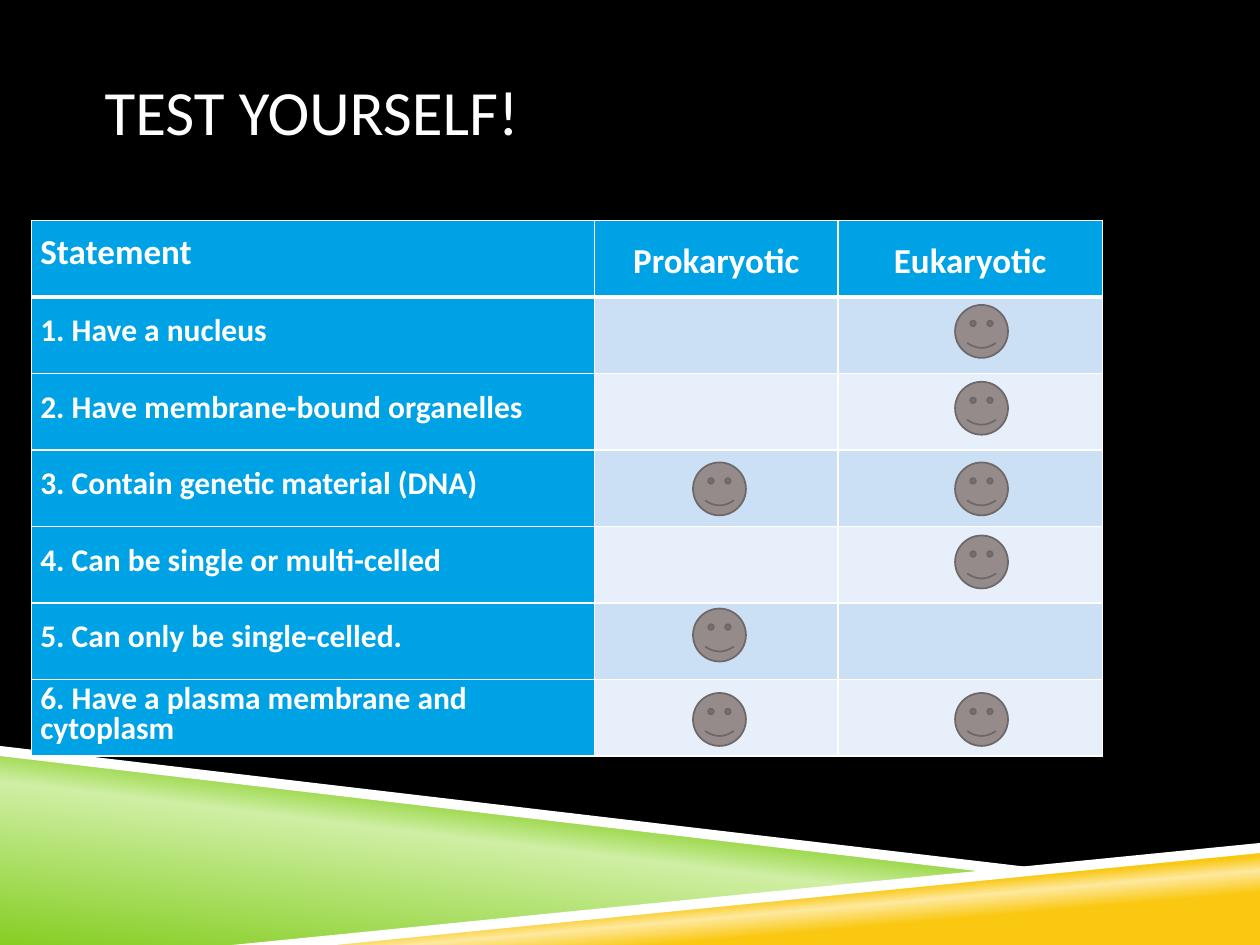
import dataclasses
import typing

import lxml.etree
import pptx
import pptx.dml.color
import pptx.dml.fill
import pptx.enum.shapes
import pptx.enum.text
import pptx.oxml
import pptx.oxml.ns
import pptx.util

EMU_PER_PX = 9144
FONT = "Calibri"
WHITE = "FFFFFF"
HEADER_BLUE = "00A2E6"
BAND_COLORS = ("CCE0F5", "E7F0FA")
PROKARYOTIC_X, EUKARYOTIC_X = 550, 758
SMILEY_SIZE = 42
COLUMN_WIDTHS = (447, 193, 210)
TABLE_HEIGHT = 425


@dataclasses.dataclass(frozen=True)
class Band:
    """A polygon of the footer, filled with one colour or a gradient."""

    points: tuple[tuple[int, int], ...]
    stops: tuple[tuple[int, str], ...]
    angle: int = 0


@dataclasses.dataclass(frozen=True)
class Statement:
    """A table row, with the top of its smileys and the columns that get one."""

    text: str
    smiley_top: int
    smiley_lefts: tuple[int, ...]


BANDS = (
    Band(((0, 597), (792, 692), (200, 750), (0, 750)),
         ((0, "86CE24"), (52, "CFEFA4"), (66, "86CE24")), 277),
    Band(((198, 750), (1000, 672), (1000, 750)),
         ((28, "FAC810"), (40, "FDE99F"), (48, "FAC810")), 265),
    Band(((0, 592), (0, 600), (790, 693), (832, 690)), ((0, WHITE),)),
    Band(((1000, 669), (184, 750), (266, 750), (1000, 677)), ((0, WHITE),)),
)

STATEMENTS = (
    Statement("1. Have a nucleus", 242, (EUKARYOTIC_X,)),
    Statement("2. Have membrane-bound organelles", 303, (EUKARYOTIC_X,)),
    Statement("3. Contain genetic material (DNA)", 367, (EUKARYOTIC_X, PROKARYOTIC_X)),
    Statement("4. Can be single or multi-celled", 425, (EUKARYOTIC_X,)),
    Statement("5. Can only be single-celled.", 483, (PROKARYOTIC_X,)),
    Statement("6. Have a plasma membrane and cytoplasm", 550, (PROKARYOTIC_X, EUKARYOTIC_X)),
)


def px(length: int) -> pptx.util.Emu:
    """Turn px into EMU."""
    return pptx.util.Emu(length * EMU_PER_PX)


def color(value: str) -> pptx.dml.color.RGBColor:
    """Turn a hex string into a colour."""
    return pptx.dml.color.RGBColor.from_string(value)


def fill_solid(fill: pptx.dml.fill.FillFormat, value: str) -> None:
    """Give a fill one colour."""
    fill.solid()
    fill.fore_color.rgb = color(value)


def add_element(parent: typing.Any, tag: str, **attributes: str) -> typing.Any:
    """Append a DrawingML element to its parent."""
    return lxml.etree.SubElement(parent, pptx.oxml.ns.qn(tag), attributes)


def add_run(paragraph: typing.Any, text: str, size: int, bold: bool = False) -> None:
    """Add one white run to a paragraph."""
    run = paragraph.add_run()
    run.text = text
    run.font.name = FONT
    run.font.size = pptx.util.Pt(size)
    run.font.bold = bold
    run.font.color.rgb = color(WHITE)


def draw_band(slide: typing.Any, band: Band) -> None:
    """Draw one footer band."""
    builder = slide.shapes.build_freeform(*band.points[0], scale=EMU_PER_PX)
    builder.add_line_segments(band.points[1:], close=True)
    shape = builder.convert_to_shape()
    shape.shadow.inherit = False
    shape.line.fill.background()
    if len(band.stops) == 1:
        fill_solid(shape.fill, band.stops[0][1])
        return
    shape.fill.gradient()
    shape.fill.gradient_angle = 360 - band.angle
    stop_list = shape._element.spPr.find(".//" + pptx.oxml.ns.qn("a:gsLst"))
    for stop in list(stop_list):
        stop_list.remove(stop)
    for position, value in band.stops:
        stop = add_element(stop_list, "a:gs", pos=str(position * 1000))
        add_element(stop, "a:srgbClr", val=value)


def draw_title(slide: typing.Any, text: str) -> None:
    """Draw the slide title."""
    frame = slide.shapes.add_textbox(px(83), px(25), px(792), px(125)).text_frame
    frame.word_wrap = True
    frame.vertical_anchor = pptx.enum.text.MSO_ANCHOR.MIDDLE
    frame.margin_left = frame.margin_right = 0
    add_run(frame.paragraphs[0], text, 36)


def style_cell(cell: typing.Any, fill: str, bottom_width: int = 1) -> None:
    """Set the fill, margins and white borders of a cell."""
    fill_solid(cell.fill, fill)
    cell.vertical_anchor = pptx.enum.text.MSO_ANCHOR.MIDDLE
    cell.margin_left = cell.margin_right = px(7)
    cell.margin_top = cell.margin_bottom = 0
    properties = cell._tc.get_or_add_tcPr()
    for index, side in enumerate("LRTB"):
        width = bottom_width if side == "B" else 1
        border = add_element(properties, f"a:ln{side}", w=str(pptx.util.Pt(width)))
        add_element(add_element(border, "a:solidFill"), "a:srgbClr", val=WHITE)
        properties.insert(index, border)


def write_cell(cell: typing.Any, text: str, size: int, centered: bool = False) -> None:
    """Write bold text into a cell."""
    paragraph = cell.text_frame.paragraphs[0]
    paragraph.line_spacing = 1.15 if centered else pptx.util.Pt(17)
    if centered:
        paragraph.alignment = pptx.enum.text.PP_ALIGN.CENTER
    add_run(paragraph, text, size, bold=True)


def draw_table(slide: typing.Any, headings: tuple[str, ...]) -> None:
    """Draw the table of statements."""
    row_count = len(STATEMENTS) + 1
    table = slide.shapes.add_table(row_count, len(headings), px(25), px(175),
                                   px(sum(COLUMN_WIDTHS)), px(TABLE_HEIGHT)).table
    for column, width in zip(table.columns, COLUMN_WIDTHS):
        column.width = px(width)
    for row in table.rows:
        row.height = px(TABLE_HEIGHT) // row_count
    for index, heading in enumerate(headings):
        style_cell(table.cell(0, index), HEADER_BLUE, bottom_width=3)
        write_cell(table.cell(0, index), heading, 20, centered=index > 0)
    for index, statement in enumerate(STATEMENTS):
        band_color = BAND_COLORS[index % 2]
        for column, fill in enumerate((HEADER_BLUE, band_color, band_color)):
            style_cell(table.cell(index + 1, column), fill)
        write_cell(table.cell(index + 1, 0), statement.text, 18)


def draw_smiley(slide: typing.Any, left: int, top: int) -> None:
    """Draw one smiley as an answer mark."""
    smiley = slide.shapes.add_shape(pptx.enum.shapes.MSO_SHAPE.SMILEY_FACE,
                                    px(left), px(top), px(SMILEY_SIZE), px(SMILEY_SIZE))
    smiley.shadow.inherit = False
    fill_solid(smiley.fill, "958B8B")
    smiley.line.color.rgb = color("6E6767")
    smiley.line.width = pptx.util.Pt(1)


def main() -> None:
    """Build and save the slide."""
    presentation = pptx.Presentation()
    presentation.slide_width, presentation.slide_height = px(1000), px(750)
    slide = presentation.slides.add_slide(presentation.slide_layouts[6])
    fill_solid(slide.background.fill, "000000")
    for band in BANDS:
        draw_band(slide, band)
    draw_title(slide, "TEST YOURSELF!")
    draw_table(slide, ("Statement", "Prokaryotic", "Eukaryotic"))
    for statement in STATEMENTS:
        for left in statement.smiley_lefts:
            draw_smiley(slide, left, statement.smiley_top)
    presentation.save("out.pptx")


if __name__ == "__main__":
    main()
